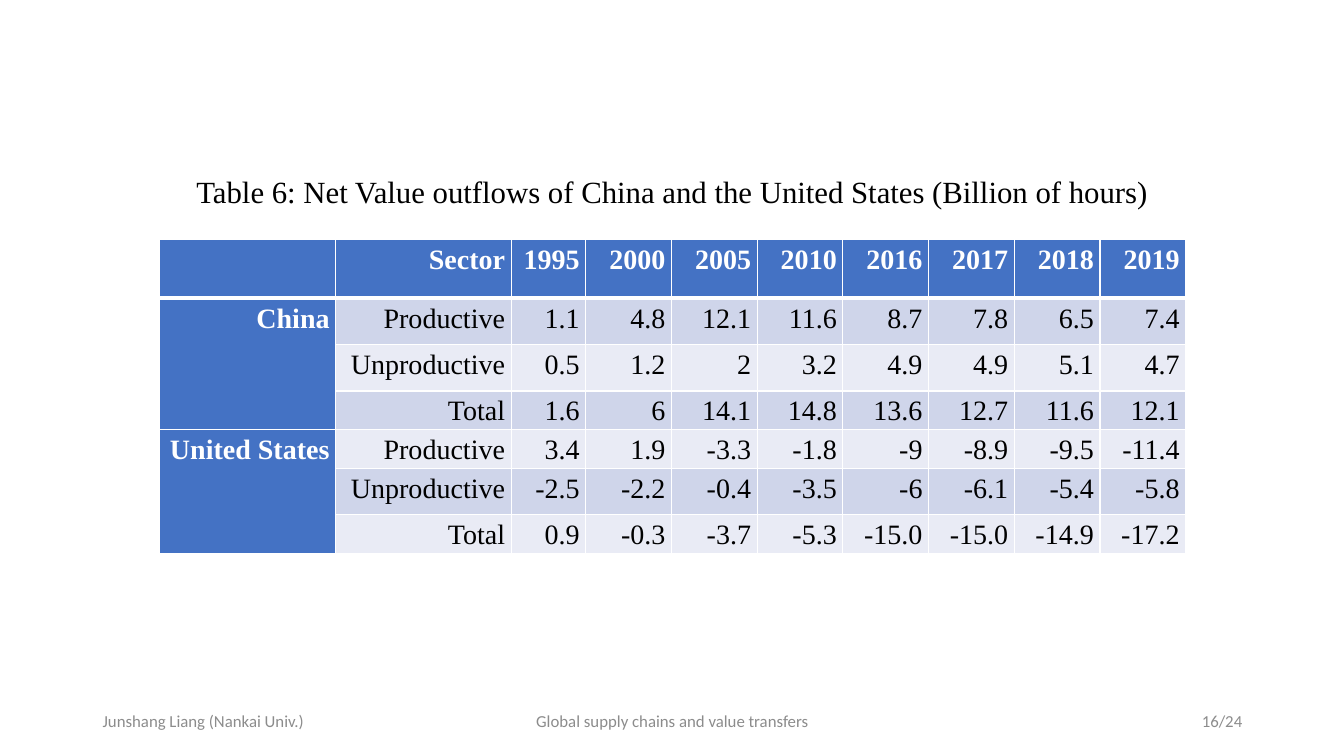
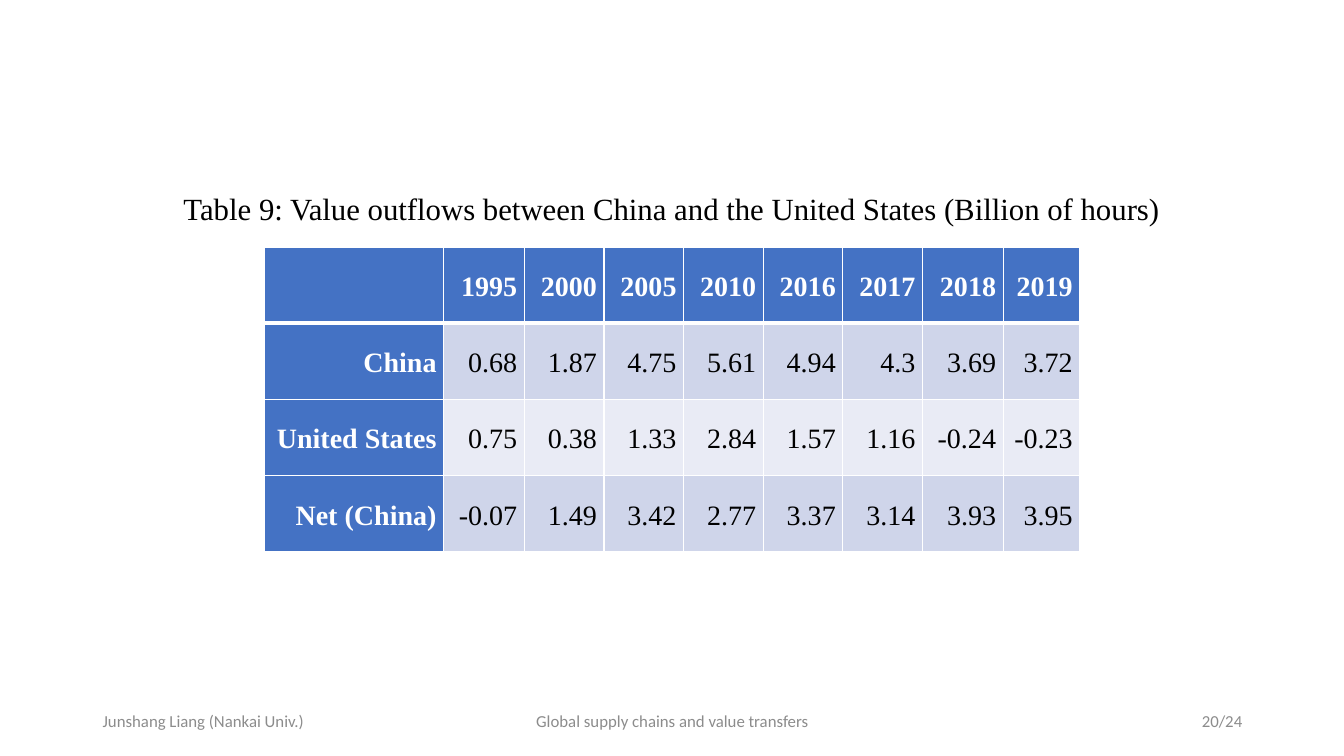
from lxml.etree import SubElement
from pptx import Presentation
from pptx.dml.color import RGBColor
from pptx.enum.text import MSO_ANCHOR as Anchor, MSO_AUTO_SIZE as AutoSize, PP_ALIGN as Align
from pptx.oxml.ns import qn
from pptx.util import Inches, Pt

WHITE = RGBColor(0xFF, 0xFF, 0xFF)
BLACK = RGBColor(0x00, 0x00, 0x00)
GREY = RGBColor(0x8C, 0x8C, 0x8C)
BLUE = RGBColor(0x44, 0x72, 0xC4)
BANDS = [RGBColor(0xE9, 0xEB, 0xF5), RGBColor(0xCF, 0xD5, 0xEA)]
SERIF, SANS = "Times New Roman", "Calibri"

AUTHOR = "Junshang Liang (Nankai Univ.)"
TALK = "Global supply chains and value transfers"
PAGES = 24
YEARS = ["1995", "2000", "2005", "2010", "2016", "2017", "2018", "2019"]

NET_OUTFLOWS = [
    ["", "Sector", *YEARS],
    ["China", "Productive", "1.1", "4.8", "12.1", "11.6", "8.7", "7.8", "6.5", "7.4"],
    ["", "Unproductive", "0.5", "1.2", "2", "3.2", "4.9", "4.9", "5.1", "4.7"],
    ["", "Total", "1.6", "6", "14.1", "14.8", "13.6", "12.7", "11.6", "12.1"],
    ["United States", "Productive", "3.4", "1.9", "-3.3", "-1.8", "-9", "-8.9", "-9.5", "-11.4"],
    ["", "Unproductive", "-2.5", "-2.2", "-0.4", "-3.5", "-6", "-6.1", "-5.4", "-5.8"],
    ["", "Total", "0.9", "-0.3", "-3.7", "-5.3", "-15.0", "-15.0", "-14.9", "-17.2"],
]
MUTUAL_OUTFLOWS = [
    ["", *YEARS],
    ["China", "0.68", "1.87", "4.75", "5.61", "4.94", "4.3", "3.69", "3.72"],
    ["United States", "0.75", "0.38", "1.33", "2.84", "1.57", "1.16", "-0.24", "-0.23"],
    ["Net (China)", "-0.07", "1.49", "3.42", "2.77", "3.37", "3.14", "3.93", "3.95"],
]


def style_runs(p, font, size, color, bold=False):
    """Format every run of a paragraph."""
    for r in p.runs:
        r.font.name, r.font.size, r.font.bold = font, Pt(size), bold
        r.font.color.rgb = color


def add_footer(s, page):
    """Add the author, talk title and page number along the bottom."""
    parts = [
        (0.92, 3, AUTHOR, Align.LEFT),
        (4.42, 4.5, TALK, Align.CENTER),
        (9.42, 3, f"{page}/{PAGES}", Align.RIGHT),
    ]
    for x, w, text, align in parts:
        tf = s.shapes.add_textbox(Inches(x), Inches(6.95), Inches(w), Inches(0.4)).text_frame
        tf.word_wrap = True
        tf.vertical_anchor = Anchor.MIDDLE
        p = tf.paragraphs[0]
        p.text, p.alignment = text, align
        style_runs(p, SANS, 12, GREY)


def set_caption(s, box, text, line_spacing, space_before):
    """Place the title placeholder as the caption of the table."""
    sp = s.shapes.title
    sp.left, sp.top, sp.width, sp.height = map(Inches, box)
    tf = sp.text_frame
    tf.text = text
    tf.word_wrap = True
    tf.auto_size = AutoSize.NONE
    tf.vertical_anchor = Anchor.TOP
    p = tf.paragraphs[0]
    p.alignment, p.line_spacing = Align.CENTER, line_spacing
    p.space_before, p.space_after = Pt(space_before), Pt(8)
    style_runs(p, SERIF, 22, BLACK)


def set_borders(cell, top, bottom):
    """Draw white cell borders, with the given top and bottom widths in points."""
    tc_pr = cell._tc.get_or_add_tcPr()
    for tag, width in (("a:lnL", 1), ("a:lnR", 1), ("a:lnT", top), ("a:lnB", bottom)):
        ln = SubElement(tc_pr, qn(tag), w=str(Pt(width)))
        SubElement(SubElement(ln, qn("a:solidFill")), qn("a:srgbClr"), val=str(WHITE))


def fill_cell(cell, text, row, col, inset, anchor):
    """Write one cell with its heading or banded style."""
    heading = row == 0 or col == 0
    set_borders(cell, 3 if row == 1 else 1, 3 if row == 0 else 1)
    cell.fill.solid()
    cell.fill.fore_color.rgb = BLUE if heading else BANDS[row % 2]
    cell.margin_left = cell.margin_right = Inches(inset)
    cell.margin_top = cell.margin_bottom = 0
    cell.vertical_anchor = anchor
    p = cell.text_frame.paragraphs[0]
    p.text = text
    p.alignment, p.line_spacing, p.space_after = Align.RIGHT, 1.15, Pt(8)
    style_runs(p, SERIF, 20, WHITE if heading else BLACK, heading)


def add_data_table(s, left, top, cols, rows, data, inset, anchor):
    """Add a table with a blue heading row and column, and return it."""
    table = s.shapes.add_table(
        len(rows), len(cols), Inches(left), Inches(top), Inches(sum(cols)), Inches(sum(rows))
    ).table
    table.first_col = True
    table.horz_banding = False
    for column, width in zip(table.columns, cols):
        column.width = Inches(width)
    for i, (row, height) in enumerate(zip(table.rows, rows)):
        row.height = Inches(height)
        for j, cell in enumerate(row.cells):
            fill_cell(cell, data[i][j], i, j, inset, anchor)
    return table


def new_slide(prs, page):
    """Add a title-only slide with the shared footer."""
    s = prs.slides.add_slide(prs.slide_layouts[5])
    add_footer(s, page)
    return s


def net_outflows_slide(prs):
    """Build the slide of net value outflows by sector."""
    s = new_slide(prs, 16)
    set_caption(
        s, (1.66, 1.71, 10.01, 0.43),
        "Table 6: Net Value outflows of China and the United States (Billion of hours)", 0.9, 10,
    )
    cols = [1.75, 1.74, 0.74] + [0.85] * 7
    rows = [0.58, 0.46, 0.46, 0.35, 0.35, 0.46, 0.35]
    table = add_data_table(s, 1.58, 2.38, cols, rows, NET_OUTFLOWS, 0.06, Anchor.TOP)
    for first in (1, 4):
        table.cell(first, 0).merge(table.cell(first + 2, 0))


def mutual_outflows_slide(prs):
    """Build the slide of value outflows between the two countries."""
    s = new_slide(prs, 20)
    set_caption(
        s, (1.68, 1.78, 9.96, 0.49),
        "Table 9: Value outflows between China and the United States (Billion of hours)", 1.15, 0,
    )
    cols = [1.78, 0.8] + [0.79] * 5 + [0.8, 0.76]
    rows = [3.02 / 4] * 4
    add_data_table(s, 2.62, 2.45, cols, rows, MUTUAL_OUTFLOWS, 0.07, Anchor.MIDDLE)


def main():
    """Build and save the presentation."""
    prs = Presentation()
    prs.slide_width, prs.slide_height = Inches(13.33), Inches(7.5)
    net_outflows_slide(prs)
    mutual_outflows_slide(prs)
    prs.save("out.pptx")


if __name__ == "__main__":
    main()
